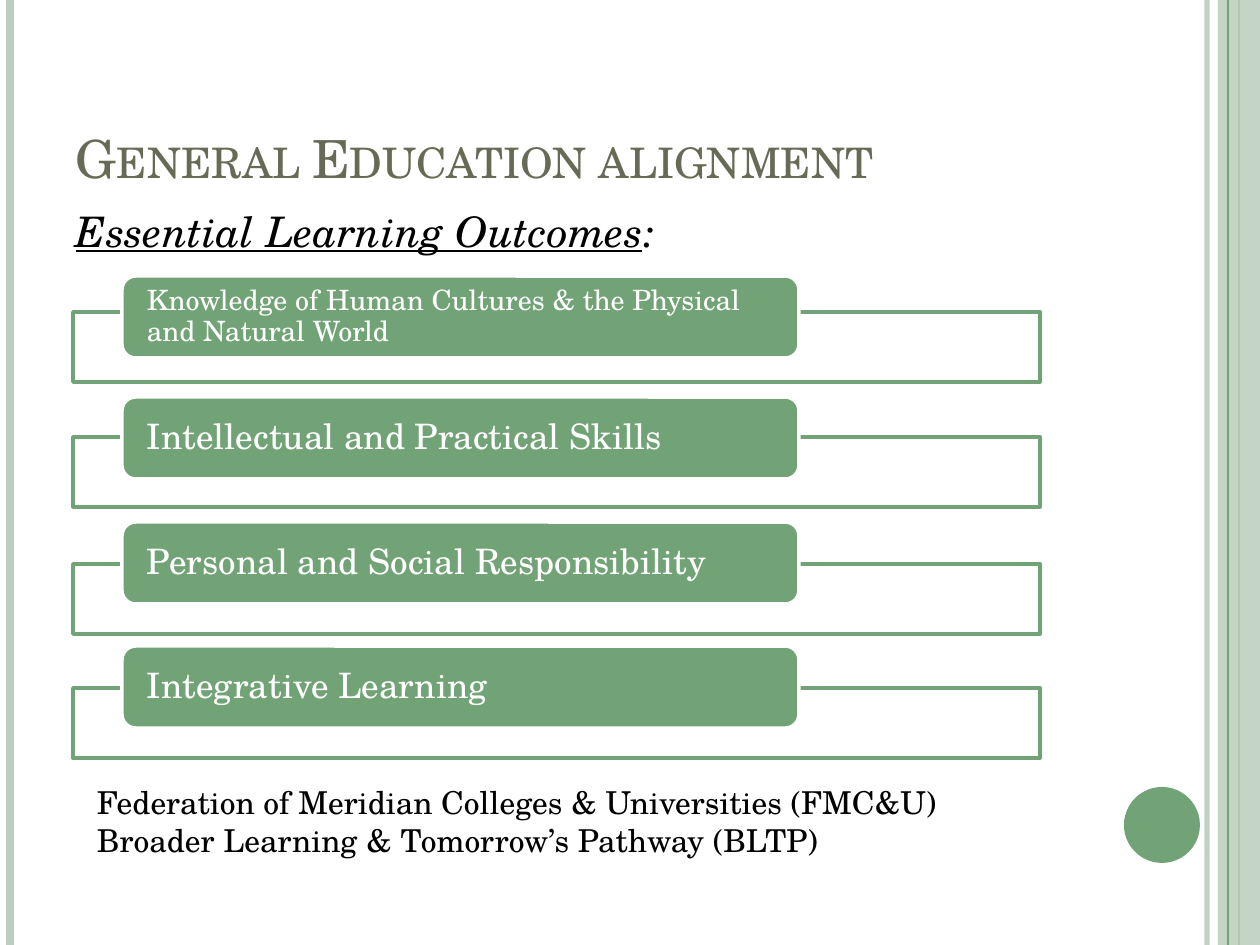
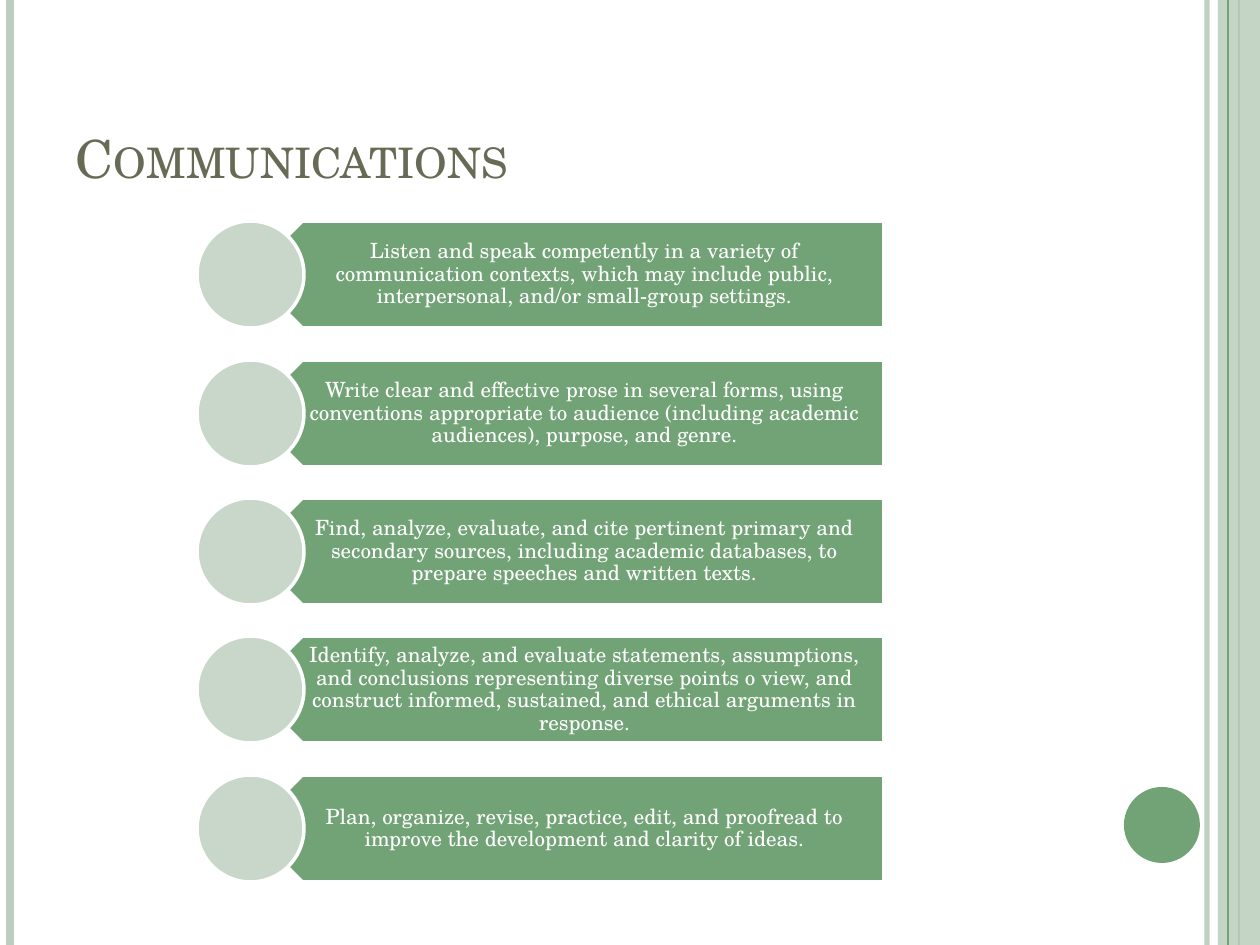
from dataclasses import dataclass

from lxml.etree import SubElement
from pptx import Presentation
from pptx.dml.color import RGBColor
from pptx.enum.shapes import MSO_CONNECTOR as CONN, MSO_SHAPE as SHAPE
from pptx.enum.text import MSO_ANCHOR as ANCHOR, MSO_AUTO_SIZE as FIT, PP_ALIGN as ALIGN
from pptx.oxml.ns import qn
from pptx.util import Emu, Pt

PX = 914400 / 126
WIDTH, HEIGHT = 1260, 945


@dataclass(frozen=True)
class Theme:
    font: str = "TeX Gyre Schola"
    green: str = "72A376"
    band: str = "BCCEBD"
    pale: str = "C9D7CA"
    heading: str = "676A55"
    black: str = "000000"
    white: str = "FFFFFF"
    title: int = 30
    subtitle: int = 24
    large: int = 20
    note: int = 18
    medium: int = 16
    small: int = 12
    outline: int = 2


T = Theme()

# Text, type size, top of the label, top of the frame
OUTCOMES = [
    ("Knowledge of Human Cultures & the Physical and Natural World", T.medium, 276, 312),
    ("Intellectual and Practical Skills", T.large, 397, 437),
    ("Personal and Social Responsibility", T.large, 522, 564),
    ("Integrative Learning", T.large, 646, 688),
]
SKILLS = [
    "Listen and speak competently in a variety of communication contexts, "
    "which may include public, interpersonal, and/or small-group settings.",
    "Write clear and effective prose in several forms, using conventions "
    "appropriate to audience (including academic audiences), purpose, and genre.",
    "Find, analyze, evaluate, and cite pertinent primary and secondary sources, "
    "including academic databases, to prepare speeches and written texts.",
    "Identify, analyze, and evaluate statements, assumptions, and conclusions "
    "representing diverse points o view, and construct informed, sustained, "
    "and ethical arguments in response.",
    "Plan, organize, revise, practice, edit, and proofread to improve the "
    "development and clarity of ideas.",
]


# Basic helpers
def px(*lengths):
    return [Emu(round(n * PX)) for n in lengths]


def rgb(color):
    return RGBColor.from_string(color)


def put(obj, **values):
    for name, value in values.items():
        setattr(obj, name, value)


def set_alpha(fill_xml, percent):
    clr = next(fill_xml.iter(qn("a:srgbClr")))
    SubElement(clr, qn("a:alpha")).set("val", str(percent * 1000))


def add_run(p, text, size, color, **font):
    r = p.add_run()
    r.text = text
    put(r.font, name=T.font, size=Pt(size), **font)
    r.font.color.rgb = rgb(color)
    return r


def set_frame(tf, insets=(13, 6, 13, 6), anchor=ANCHOR.TOP):
    left, top, right, bottom = px(*insets)
    put(tf, word_wrap=True, auto_size=FIT.NONE, vertical_anchor=anchor,
        margin_left=left, margin_top=top, margin_right=right, margin_bottom=bottom)
    return tf.paragraphs[0]


# Kinds of element
def add_box(s, kind, box, fill, line=None, alpha=None):
    sp = s.shapes.add_shape(kind, *px(*box))
    sp.shadow.inherit = False
    sp.fill.solid()
    sp.fill.fore_color.rgb = rgb(fill)
    if alpha:
        set_alpha(sp.element.spPr.find(qn("a:solidFill")), alpha)
    if line:
        sp.line.color.rgb = rgb(line)
        sp.line.width = Pt(T.outline)
    else:
        sp.line.fill.background()
    return sp


def add_rule(s, x, color, width, alpha=None):
    ln = s.shapes.add_connector(CONN.STRAIGHT, *px(x, 0, x, HEIGHT))
    ln.line.color.rgb = rgb(color)
    ln.line.width = Pt(width)
    if alpha:
        set_alpha(ln.element.spPr.find(qn("a:ln")), alpha)
    SubElement(ln.element.spPr, qn("a:effectLst"))
    return ln


def add_text(s, box, **frame):
    return set_frame(s.shapes.add_textbox(*px(*box)).text_frame, **frame)


def add_title_slide(prs, layout, title):
    s = prs.slides.add_slide(layout)
    sp = s.shapes.title
    left, top, width, height = px(63, 38, 1029, 157)
    put(sp, left=left, top=top, width=width, height=height)
    p = set_frame(sp.text_frame, anchor=ANCHOR.BOTTOM)
    p.alignment = ALIGN.LEFT
    r = add_run(p, title, T.title, T.heading)
    r.font._element.set("cap", "small")
    return s


def add_outcome(s, text, size, label_top, frame_top):
    add_box(s, SHAPE.RECTANGLE, (73, frame_top, 967, 70), T.white, T.green, alpha=90)
    sp = add_box(s, SHAPE.ROUNDED_RECTANGLE, (122, label_top, 677, 82), T.green, T.white)
    p = set_frame(sp.text_frame, (21, 0, 21, 0), ANCHOR.MIDDLE)
    put(p, alignment=ALIGN.LEFT, line_spacing=0.9)
    add_run(p, text, size, T.white)


def add_skill(s, text, top):
    bar = (249, top, 635, 107)
    add_box(s, SHAPE.PENTAGON, bar, T.green, T.white).rotation = 180
    p = add_text(s, bar, insets=(47, 6, 11, 6), anchor=ANCHOR.MIDDLE)
    put(p, alignment=ALIGN.CENTER, line_spacing=0.9)
    add_run(p, text, T.small, T.white)
    add_box(s, SHAPE.OVAL, (197, top, 107, 107), T.pale, T.white)


def move_bands_to_layout(s, layout):
    """Draw the side bands and the dot, then hand them to the shared layout."""
    bands = [
        add_rule(s, 1207, T.band, 3, alpha=93),
        add_rule(s, 10, T.band, 4.5),
        add_rule(s, 1239, T.green, 1.5),
        add_box(s, SHAPE.RECTANGLE, (1218, 0, 42, HEIGHT), T.band, alpha=87),
        add_rule(s, 1228, T.green, 0.75),
        add_box(s, SHAPE.OVAL, (1124, 787, 76, 76), T.green),
    ]
    for band in bands:
        layout.shapes.element.append(band.element)


def main():
    prs = Presentation()
    prs.slide_width, prs.slide_height = px(WIDTH, HEIGHT)
    layout = prs.slide_layouts.get_by_name("Title Only")

    # Slide 1: outcomes
    s = add_title_slide(prs, layout, "General Education alignment")
    move_bands_to_layout(s, layout)
    p = add_text(s, (63, 199, 1029, 72))
    p.space_before = Pt(6)
    add_run(p, "Essential Learning Outcomes", T.subtitle, T.black, italic=True, underline=True)
    add_run(p, ":", T.subtitle, T.black, italic=True)
    for outcome in OUTCOMES:
        add_outcome(s, *outcome)
    p = add_text(s, (84, 777, 967, 89))
    add_run(p, "Federation of Meridian Colleges & Universities (FMC&U) "
               "Broader Learning & Tomorrow’s Pathway (BLTP)", T.note, T.black)

    # Slide 2: communication skills at an even pitch
    s = add_title_slide(prs, layout, "Communications")
    first, last = 221, 775
    pitch = (last - first) / (len(SKILLS) - 1)
    for i, text in enumerate(SKILLS):
        add_skill(s, text, round(first + i * pitch))

    prs.save("out.pptx")


if __name__ == "__main__":
    main()
